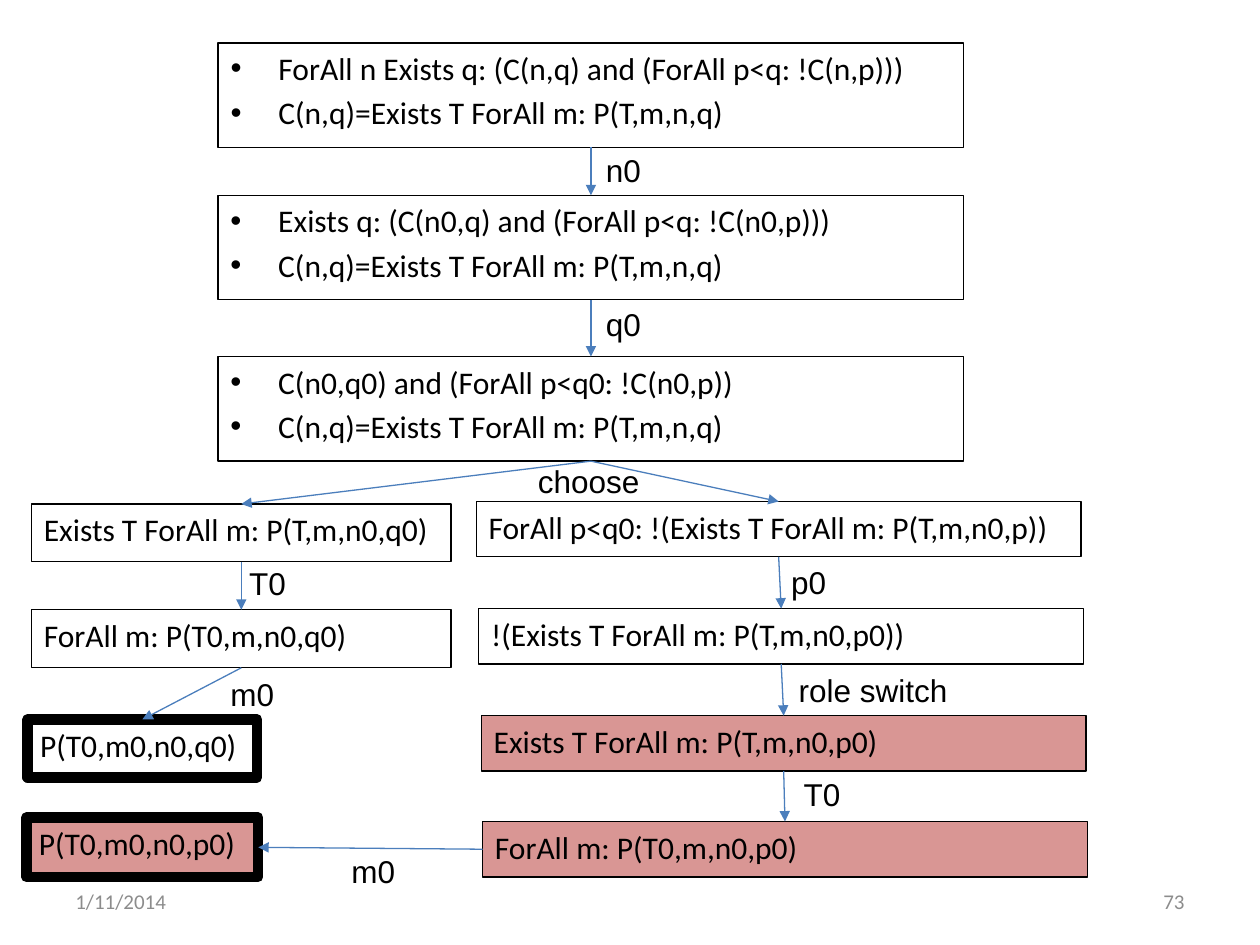
"""Build the proof-game slide: formula boxes joined by labelled moves."""
from pptx import Presentation
from pptx.dml.color import RGBColor as Color
from pptx.enum.shapes import MSO_CONNECTOR as Connector, MSO_SHAPE as Shape
from pptx.enum.text import MSO_ANCHOR as Anchor, MSO_AUTO_SIZE as AutoSize, PP_ALIGN as Align
from pptx.oxml.ns import qn
from pptx.util import Inches, Pt
from lxml.etree import SubElement

THEME = {
    "ink": "000000", "paper": "FFFFFF", "rose": "D99694", "arrow": "4B7EBC", "grey": "8C8C8C",
    "formula_font": "Calibri", "label_font": "Arial",
    "text_size": 18, "footer_size": 12, "space_before": 3.6, "thin": 0.75, "thick": 6,
}
DEFINITION = "C(n,q)=Exists T ForAll m: P(T,m,n,q)"
TOP, LEFT, BOTTOM, RIGHT = range(4)

STATEMENTS = {
    "claim": (0.34, "ForAll n Exists q: (C(n,q) and (ForAll p<q: !C(n,p)))"),
    "number": (1.55, "Exists q: (C(n0,q) and (ForAll p<q: !C(n0,p)))"),
    "colour": (2.83, "C(n0,q0) and (ForAll p<q0: !C(n0,p))"),
}
FORMULAS = {
    "exists": ((0.25, 4, 3.33, 0.46), "Exists T ForAll m: P(T,m,n0,q0)", "paper", "thin"),
    "forall": ((0.25, 4.84, 3.33, 0.46), "ForAll m: P(T0,m,n0,q0)", "paper", "thin"),
    "left end": ((0.22, 5.71, 1.82, 0.46), "P(T0,m0,n0,q0)", "paper", "thick"),
    "smaller": ((3.78, 3.98, 4.8, 0.44), "ForAll p<q0: !(Exists T ForAll m: P(T,m,n0,p))", "paper", "thin"),
    "negated": ((3.8, 4.83, 4.8, 0.44), "!(Exists T ForAll m: P(T,m,n0,p0))", "paper", "thin"),
    "switched": ((3.82, 5.68, 4.8, 0.44), "Exists T ForAll m: P(T,m,n0,p0)", "rose", "thin"),
    "chosen": ((3.83, 6.52, 4.8, 0.44), "ForAll m: P(T0,m,n0,p0)", "rose", "thin"),
    "right end": ((0.21, 6.49, 1.84, 0.47), "P(T0,m0,n0,p0)", "rose", "thick"),
}
MOVES = [
    ("claim", "number"), ("number", "colour"), ("colour", "exists"), ("colour", "smaller"),
    ("exists", "forall"), ("forall", "left end"), ("smaller", "negated"),
    ("negated", "switched"), ("switched", "chosen"), ("chosen", "right end"),
]
LABELS = [
    ("n0", 4.71, 1.15, 0.48), ("q0", 4.71, 2.37, 0.48), ("choose", 4.17, 3.62, 1.02),
    ("T0", 1.88, 4.43, 0.5), ("m0", 1.73, 5.31, 0.55), ("p0", 6.18, 4.42, 0.48),
    ("role switch", 6.24, 5.28, 1.39), ("T0", 6.28, 6.1, 0.56), ("m0", 2.69, 6.71, 0.55),
]
FOOTERS = [("1/11/2014", 0.5, Align.LEFT), ("73", 7.17, Align.RIGHT)]


def color(name):
    return Color.from_string(THEME[name])


def place(box, left, top, width, height):
    box.left, box.top, box.width, box.height = map(Inches, (left, top, width, height))


def write(box, lines, font="formula_font", size="text_size", ink="ink", align=Align.LEFT, space=0, bullets=False):
    frame = box.text_frame
    for index, line in enumerate(lines):
        para = frame.paragraphs[0] if index == 0 else frame.add_paragraph()
        para.alignment, para.space_before = align, Pt(space)
        if bullets:
            props = para._p.get_or_add_pPr()
            props.set("marL", str(Inches(0.38)))
            props.set("indent", str(Inches(-0.38)))
            SubElement(props, qn("a:buFont"), typeface="Arial")
            SubElement(props, qn("a:buChar"), char="•")
        span = para.add_run()
        span.text = line
        span.font.name, span.font.size = THEME[font], Pt(THEME[size])
        span.font.color.rgb = color(ink)


def style_formula(box, lines, fill="paper", border="thin", bullets=False):
    box.fill.solid()
    box.fill.fore_color.rgb = color(fill)
    box.line.color.rgb = color("ink")
    box.line.width = Pt(THEME[border])
    frame = box.text_frame
    frame.word_wrap, frame.auto_size = True, AutoSize.NONE
    frame.vertical_anchor = Anchor.TOP
    write(box, lines, space=THEME["space_before"], bullets=bullets)


def add_rectangle(slide):
    box = slide.shapes.add_shape(Shape.RECTANGLE, 0, 0, 0, 0)
    box.shadow.inherit = False
    return box


def add_text(slide, text, left, top, width, **style):
    box = slide.shapes.add_textbox(*map(Inches, (left, top, width, 0.4)))
    write(box, [text], **style)
    return box.text_frame


def add_arrow(slide, start, end, start_side, end_side):
    arrow = slide.shapes.add_connector(Connector.STRAIGHT, 0, 0, 0, 0)
    arrow.begin_connect(start, start_side)
    arrow.end_connect(end, end_side)
    arrow.line.color.rgb = color("arrow")
    arrow.line.width = Pt(THEME["thin"])
    SubElement(arrow.line._get_or_add_ln(), qn("a:tailEnd"), type="triangle")
    SubElement(arrow._element.spPr, qn("a:effectLst"))


def main():
    deck = Presentation()
    deck.slide_width, deck.slide_height = Inches(10), Inches(7.5)
    slide = deck.slides.add_slide(deck.slide_layouts[1])
    title = slide.shapes.title._element
    title.getparent().remove(title)

    boxes = {}
    for name, (top, statement) in STATEMENTS.items():
        box = add_rectangle(slide) if boxes else slide.placeholders[1]
        place(box, 1.73, top, 5.92, 0.83)
        style_formula(box, [statement, DEFINITION], bullets=True)
        boxes[name] = box
    for name, (area, formula, fill, border) in FORMULAS.items():
        box = boxes[name] = add_rectangle(slide)
        place(box, *area)
        style_formula(box, [formula], fill, border)

    for start, end in MOVES:
        sides = (LEFT, RIGHT) if end == "right end" else (BOTTOM, TOP)
        add_arrow(slide, boxes[start], boxes[end], *sides)
    for text, left, top, width in LABELS:
        frame = add_text(slide, text, left, top, width, font="label_font")
        frame.word_wrap, frame.auto_size = False, AutoSize.SHAPE_TO_FIT_TEXT
    for text, left, align in FOOTERS:
        frame = add_text(slide, text, left, 6.95, 2.33, size="footer_size", ink="grey", align=align)
        frame.word_wrap, frame.vertical_anchor = True, Anchor.MIDDLE
    deck.save("out.pptx")


if __name__ == "__main__":
    main()
